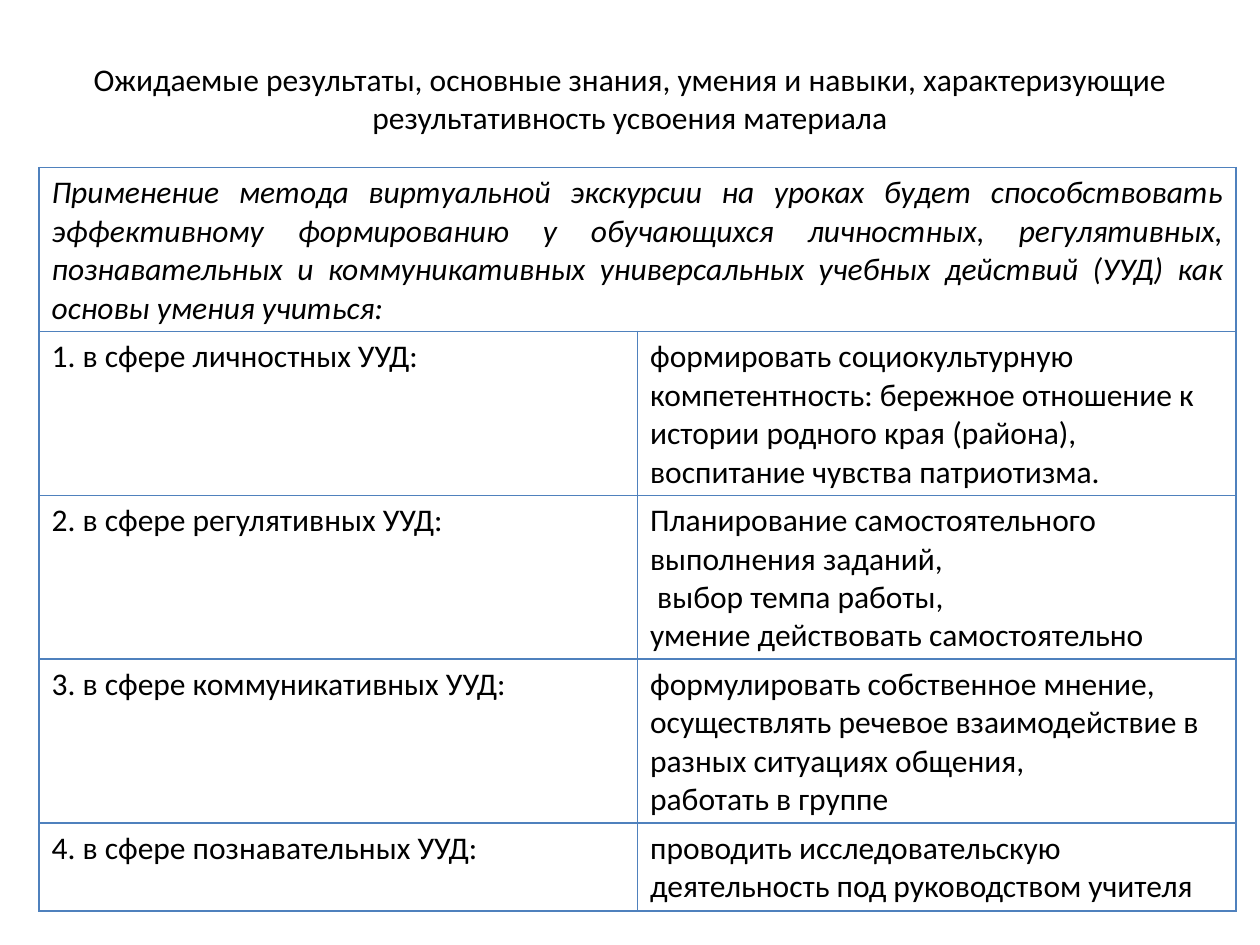
from typing import NamedTuple

from lxml.etree import SubElement
from pptx import Presentation
from pptx.dml.color import RGBColor
from pptx.enum.text import MSO_ANCHOR, PP_ALIGN
from pptx.oxml.ns import qn
from pptx.util import Inches, Pt

TEXT_FORMAT = {"name": "Calibri", "size": Pt(18), "bold": False}
TEXT_COLOR = "000000"
CELL_COLOR = "FFFFFF"
BORDER_COLOR = "4F81BD"
BORDER_SIDES = ("a:lnL", "a:lnR", "a:lnT", "a:lnB")

TITLE = (
    "Ожидаемые результаты, основные знания, умения и навыки, "
    "характеризующие результативность усвоения материала"
)
SUMMARY = (
    "Применение метода виртуальной экскурсии на уроках будет способствовать "
    "эффективному формированию у обучающихся личностных, регулятивных, "
    "познавательных и коммуникативных универсальных учебных действий (УУД) "
    "как основы умения учиться:"
)


class Sphere(NamedTuple):
    name: str
    results: tuple[str, ...]
    height: float = 1.3


SPHERES = [
    Sphere("личностных", (
        "формировать социокультурную компетентность: бережное отношение к "
        "истории родного края (района), воспитание чувства патриотизма.",
    )),
    Sphere("регулятивных", (
        "Планирование самостоятельного выполнения заданий,",
        " выбор темпа работы,",
        "умение действовать самостоятельно",
    )),
    Sphere("коммуникативных", (
        "формулировать собственное мнение,",
        "осуществлять речевое взаимодействие в разных ситуациях общения,",
        "работать в группе",
    )),
    Sphere("познавательных", (
        "проводить исследовательскую деятельность под руководством учителя",
    ), 0.7),
]


def color(value: str) -> RGBColor:
    return RGBColor.from_string(value)


def write(frame, lines: tuple[str, ...], align=PP_ALIGN.LEFT, italic: bool = False) -> None:
    frame.word_wrap = True
    for index, line in enumerate(lines):
        para = frame.add_paragraph() if index else frame.paragraphs[0]
        para.alignment = align
        span = para.add_run()
        span.text = line
        for attribute, value in {**TEXT_FORMAT, "italic": italic}.items():
            setattr(span.font, attribute, value)
        span.font.color.rgb = color(TEXT_COLOR)


def style_cell(cell) -> None:
    properties = cell._tc.get_or_add_tcPr()
    for side in BORDER_SIDES:
        border = SubElement(properties, qn(side), w=str(Pt(1)))
        fill = SubElement(border, qn("a:solidFill"))
        SubElement(fill, qn("a:srgbClr"), val=BORDER_COLOR)
    cell.fill.solid()
    cell.fill.fore_color.rgb = color(CELL_COLOR)


def add_title(page) -> None:
    box = page.shapes.add_textbox(Inches(0.5), Inches(0.3), Inches(9), Inches(1.25))
    frame = box.text_frame
    frame.vertical_anchor = MSO_ANCHOR.MIDDLE
    frame.margin_bottom = Inches(0.35)
    write(frame, (TITLE,), PP_ALIGN.CENTER)


def add_results(page, spheres: list[Sphere]) -> None:
    heights = [1.3] + [sphere.height for sphere in spheres]
    table = page.shapes.add_table(
        len(heights), 2, Inches(0.31), Inches(1.33), Inches(9.5), Inches(sum(heights))
    ).table
    table.first_row = False
    table.horz_banding = False
    for row, height in zip(table.rows, heights):
        row.height = Inches(height)
    for cell in table.iter_cells():
        style_cell(cell)
    table.cell(0, 0).merge(table.cell(0, 1))
    write(table.cell(0, 0).text_frame, (SUMMARY,), PP_ALIGN.JUSTIFY, True)
    for number, sphere in enumerate(spheres, 1):
        label = f"{number}. в сфере {sphere.name} УУД:"
        write(table.cell(number, 0).text_frame, (label,))
        write(table.cell(number, 1).text_frame, sphere.results)


def main() -> None:
    deck = Presentation()
    deck.slide_width = Inches(10)
    deck.slide_height = Inches(7.5)
    page = deck.slides.add_slide(deck.slide_layouts[6])
    add_title(page)
    add_results(page, SPHERES)
    deck.save("out.pptx")


if __name__ == "__main__":
    main()
